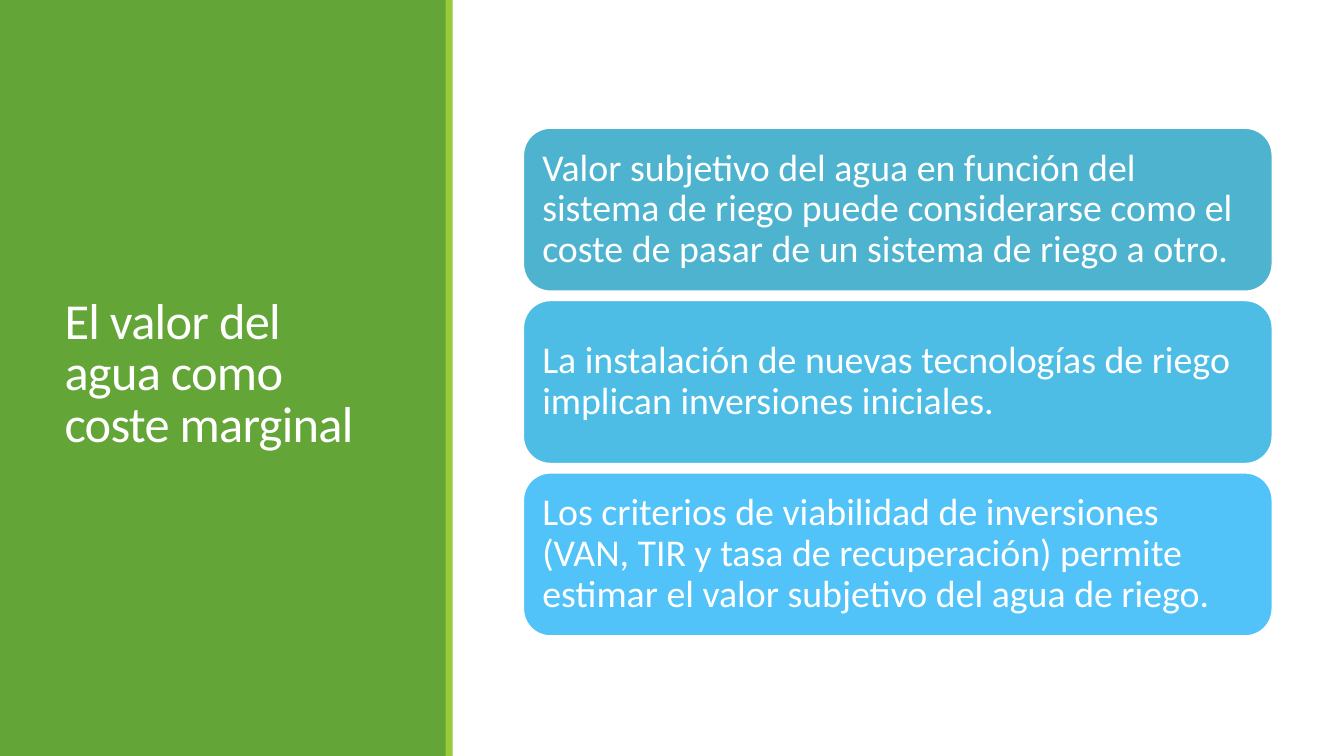
from dataclasses import dataclass

from pptx import Presentation
from pptx.dml.color import RGBColor
from pptx.enum.shapes import MSO_SHAPE
from pptx.enum.text import MSO_ANCHOR, MSO_AUTO_SIZE, PP_ALIGN
from pptx.shapes.autoshape import Shape
from pptx.slide import Slide
from pptx.text.text import TextFrame
from pptx.util import Inches, Pt

COLOURS = {
    "white": "FFFFFF",
    "green": "63A537",
    "lime": "99CB38",
    "teal": "4EB3CF",
    "sky": "4DBDE6",
    "azure": "51C3F9",
}
FONT = "Calibri"
SLIDE_WIDTH, SLIDE_HEIGHT = 13.33, 7.5
CARD_LEFT, CARD_TOP = 5.19, 1.27
CARD_WIDTH, CARD_HEIGHT, CARD_STEP = 7.43, 1.62, 1.71


@dataclass(frozen=True)
class Card:
    text: str
    colour: str


CARDS = [
    Card("Valor subjetivo del agua en función del sistema de riego puede "
         "considerarse como el coste de pasar de un sistema de riego a otro.", "teal"),
    Card("La instalación de nuevas tecnologías de riego implican "
         "inversiones iniciales.", "sky"),
    Card("Los criterios de viabilidad de inversiones (VAN, TIR y tasa de "
         "recuperación) permite estimar el valor subjetivo del agua de riego.", "azure"),
]


def rgb(name: str) -> RGBColor:
    return RGBColor.from_string(COLOURS[name])


def write(frame: TextFrame, text: str, *, size: float, line_spacing: float,
          inset: float, tracking: float = 0) -> None:
    """Fill a frame with one left-aligned, vertically centred paragraph."""
    frame.word_wrap = True
    frame.auto_size = MSO_AUTO_SIZE.NONE
    frame.vertical_anchor = MSO_ANCHOR.MIDDLE
    frame.margin_left = frame.margin_right = Inches(inset)
    frame.margin_top = frame.margin_bottom = Inches(inset)
    paragraph = frame.paragraphs[0]
    paragraph.alignment = PP_ALIGN.LEFT
    paragraph.line_spacing = line_spacing
    run = paragraph.add_run()
    run.text = text
    run.font.name = FONT
    run.font.size = Pt(size)
    run.font.color.rgb = rgb("white")
    if tracking:
        run.font._element.set("spc", str(round(tracking * 100)))


def add_block(slide: Slide, kind: MSO_SHAPE, left: float, top: float,
              width: float, height: float, colour: str) -> Shape:
    block = slide.shapes.add_shape(
        kind, Inches(left), Inches(top), Inches(width), Inches(height))
    block.shadow.inherit = False
    block.fill.solid()
    block.fill.fore_color.rgb = rgb(colour)
    block.line.fill.background()
    return block


def add_card(slide: Slide, card: Card, top: float) -> None:
    block = add_block(slide, MSO_SHAPE.ROUNDED_RECTANGLE, CARD_LEFT, top,
                      CARD_WIDTH, CARD_HEIGHT, card.colour)
    block.line.color.rgb = rgb("white")
    block.line.width = Pt(1.25)
    write(block.text_frame, card.text, size=27, line_spacing=0.9, inset=0.11)


def add_title(slide: Slide, text: str) -> None:
    title = slide.shapes.title
    title.left, title.top = Inches(0.54), Inches(0.57)
    title.width, title.height = Inches(3.37), Inches(6.31)
    write(title.text_frame, text, size=36, line_spacing=0.85, inset=0.1, tracking=-0.5)
    # Bring the title in front of the side panel
    slide.shapes.element.append(title.element)


def main() -> None:
    deck = Presentation()
    deck.slide_width, deck.slide_height = Inches(SLIDE_WIDTH), Inches(SLIDE_HEIGHT)
    slide = deck.slides.add_slide(deck.slide_layouts.get_by_name("Title Only"))
    slide.background.fill.solid()
    slide.background.fill.fore_color.rgb = rgb("white")

    # Side panel with its accent stripe and title
    add_block(slide, MSO_SHAPE.RECTANGLE, 0, 0, 4.43, SLIDE_HEIGHT, "green")
    add_block(slide, MSO_SHAPE.RECTANGLE, 4.42, 0, 0.07, SLIDE_HEIGHT, "lime")
    add_title(slide, "El valor del agua como coste marginal")

    # Stack of statement cards
    for position, card in enumerate(CARDS):
        add_card(slide, card, CARD_TOP + position * CARD_STEP)

    deck.save("out.pptx")


if __name__ == "__main__":
    main()
